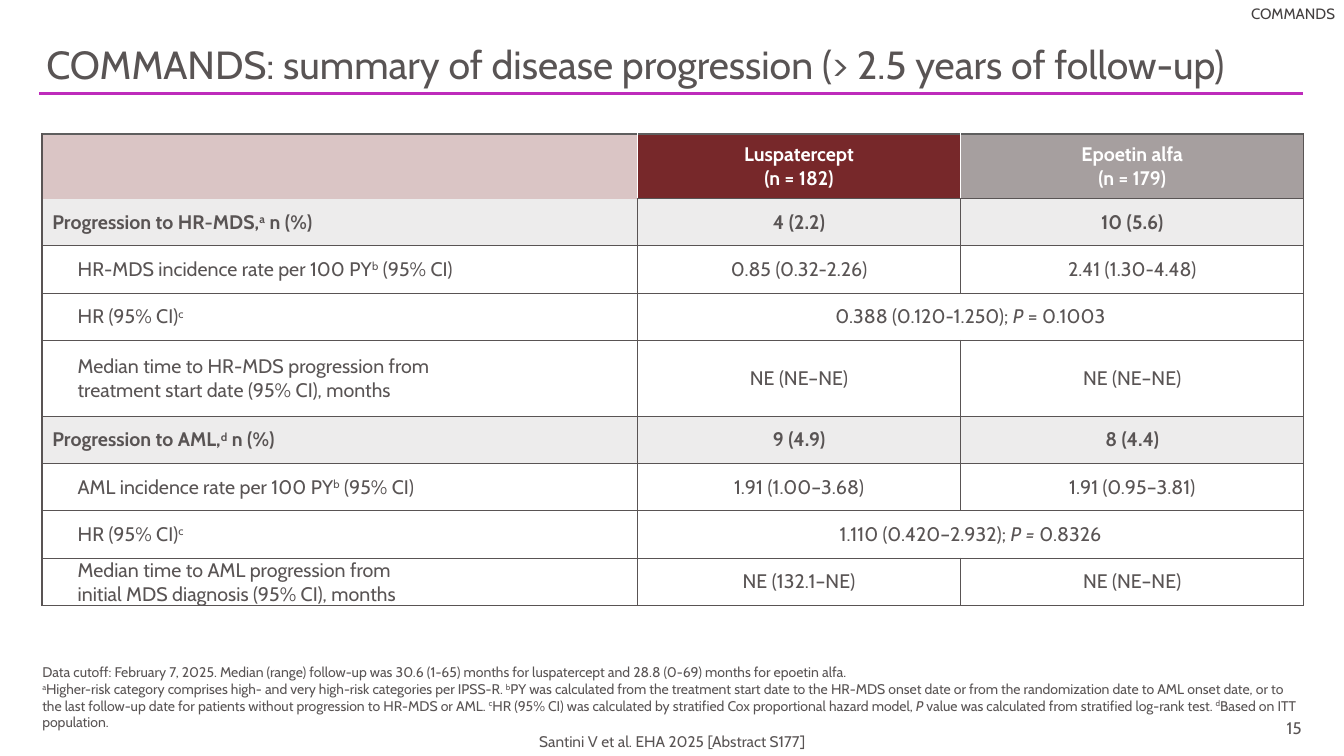
from copy import deepcopy

from lxml import etree
from pptx import Presentation
from pptx.dml.color import RGBColor
from pptx.enum.shapes import MSO_CONNECTOR
from pptx.enum.text import MSO_ANCHOR as ANCHOR, PP_ALIGN as ALIGN
from pptx.oxml.ns import qn
from pptx.util import Inches, Pt

FONT = "Cabin"
COLORS = {
    "text": "595454", "tag": "433F3F", "rule": "BE2BBB", "white": "FFFFFF",
    "top": "5E5E5E", "corner": "DAC5C5", "luspatercept": "77282A",
    "epoetin": "A69F9F", "section": "EDECEC",
}
COL_WIDTHS = [5.9, 3.21, 3.4]
ROW_HEIGHT = 0.47
ROW_HEIGHTS = {0: 0.64, 4: 0.75}

# ^x^ marks superscript and _x_ marks italics; None joins the cell to its left neighbour.
ROWS = [
    ["", "Luspatercept\n(n = 182)", "Epoetin alfa\n(n = 179)"],
    ["Progression to HR-MDS,^a^ n (%)", "4 (2.2)", "10 (5.6)"],
    ["HR-MDS incidence rate per 100 PY^b^ (95% CI)", "0.85 (0.32-2.26)", "2.41 (1.30-4.48)"],
    ["HR (95% CI)^c^", "0.388 (0.120-1.250); _P _= 0.1003", None],
    ["Median time to HR-MDS progression from \ntreatment start date (95% CI), months",
     "NE (NE–NE)", "NE (NE–NE)"],
    ["Progression to AML,^d^ n (%)", "9 (4.9)", "8 (4.4)"],
    ["AML incidence rate per 100 PY^b^ (95% CI)", "1.91 (1.00–3.68)", "1.91 (0.95–3.81)"],
    ["HR (95% CI)^c^", "1.110 (0.420–2.932); _P = _0.8326", None],
    ["Median time to AML progression from \ninitial MDS diagnosis (95% CI), months",
     "NE (132.1–NE)", "NE (NE–NE)"],
]
HEADER_FILLS = ["corner", "luspatercept", "epoetin"]
SECTION_ROWS = {1, 5}

FOOTNOTES = [
    "Data cutoff: February 7, 2025. Median (range) follow-up was 30.6 (1-65) months for "
    "luspatercept and 28.8 (0-69) months for epoetin alfa.",
    "^a^Higher-risk category comprises high- and very high-risk categories per IPSS-R. "
    "^b^PY was calculated from the treatment start date to the HR-MDS onset date or from the "
    "randomization date to AML onset date, or to the last follow-up date for patients without "
    "progression to HR-MDS or AML. ^c^HR (95% CI) was calculated by stratified Cox proportional "
    "hazard model, _P _value was calculated from stratified log-rank test. "
    "^d^Based on ITT population.",
]


def rgb(name):
    return RGBColor.from_string(COLORS[name])


def set_attrs(obj, values):
    for name, value in values.items():
        setattr(obj, name, value)


def add_run(p, text, size, color, bold, italic, raised):
    r = p.add_run()
    r.text = text
    set_attrs(r.font, {"name": FONT, "size": Pt(size), "bold": bold, "italic": italic})
    r.font.color.rgb = rgb(color)
    if raised:
        r.font._element.set("baseline", "30000")
    return r


def write(p, text, size, color="text", bold=False, align=ALIGN.LEFT):
    """Fill a paragraph from text with ^superscript^, _italic_ and line break marks."""
    p.alignment = align
    for i, part in enumerate(text.split("^")):
        for j, piece in enumerate(part.split("_")):
            for k, line in enumerate(piece.split("\n")):
                if k:
                    p.add_line_break()
                    p._p[-1].append(deepcopy(r.font._element))
                if line:
                    r = add_run(p, line, size, color, bold, j % 2 == 1, i % 2 == 1)


def add_text(slide, box, paragraphs, size, color="text", align=ALIGN.LEFT,
             anchor=ANCHOR.TOP, insets=(0.1, 0.05, 0.1, 0.05), spacing=None):
    tf = slide.shapes.add_textbox(*map(Inches, box)).text_frame
    sides = ("margin_left", "margin_top", "margin_right", "margin_bottom")
    set_attrs(tf, {"word_wrap": True, "vertical_anchor": anchor,
                   **dict(zip(sides, map(Inches, insets)))})
    for i, text in enumerate(paragraphs):
        p = tf.add_paragraph() if i else tf.paragraphs[0]
        write(p, text, size, color, align=align)
        if spacing:
            p.line_spacing = spacing


def add_rule(slide, x1, x2, y):
    line = slide.shapes.add_connector(
        MSO_CONNECTOR.STRAIGHT, Inches(x1), Inches(y), Inches(x2), Inches(y))
    line.line.color.rgb = rgb("rule")
    line.line.width = Pt(2.25)
    etree.SubElement(line._element.spPr, qn("a:effectLst"))


def set_border(cell, side, color, width):
    ln = etree.SubElement(cell._tc.get_or_add_tcPr(), qn(f"a:ln{side}"), w=str(Pt(width)))
    if color is None:
        etree.SubElement(ln, qn("a:noFill"))
    else:
        fill = etree.SubElement(ln, qn("a:solidFill"))
        etree.SubElement(fill, qn("a:srgbClr"), val=COLORS[color])


def cell_borders(row, col):
    borders = {side: ("text", 1) for side in "LRTB"}
    if col == 0:
        borders["L"] = ("text", 1.5)
    if row == 0:
        borders["T"] = ("top", 1.5)
        if col > 0:
            borders["L"] = ("white", 1)
        if col < 2:
            borders["R"] = ("white", 1)
    if col == 0 and row < 2:
        borders["B" if row == 0 else "T"] = (None, 1)
    return borders


def format_cell(cell, row, col):
    set_attrs(cell, {"vertical_anchor": ANCHOR.MIDDLE, "margin_left": Inches(0.1),
                     "margin_right": Inches(0.1), "margin_top": 0, "margin_bottom": 0})
    for side, (color, width) in cell_borders(row, col).items():
        set_border(cell, side, color, width)
    if row == 0 or row in SECTION_ROWS:
        cell.fill.solid()
        cell.fill.fore_color.rgb = rgb("section" if row else HEADER_FILLS[col])
    else:
        cell.fill.background()


def add_progression_table(slide):
    heights = [ROW_HEIGHTS.get(i, ROW_HEIGHT) for i in range(len(ROWS))]
    table = slide.shapes.add_table(
        len(ROWS), len(COL_WIDTHS), Inches(0.42), Inches(1.33),
        Inches(sum(COL_WIDTHS)), Inches(sum(heights))).table
    set_attrs(table, {"first_row": False, "horz_banding": False})
    for column, width in zip(table.columns, COL_WIDTHS):
        column.width = Inches(width)
    for i, (values, height) in enumerate(zip(ROWS, heights)):
        table.rows[i].height = Inches(height)
        strong = i == 0 or i in SECTION_ROWS
        for j, value in enumerate(values):
            cell = table.cell(i, j)
            format_cell(cell, i, j)
            if value is None:
                table.cell(i, j - 1).merge(cell)
            elif value:
                p = cell.text_frame.paragraphs[0]
                write(p, value, 14, "text" if i else "white", strong,
                      ALIGN.CENTER if j else ALIGN.LEFT)
                if j == 0 and not strong:
                    set_attrs_xml = {"marL": str(Inches(0.25)), "indent": "0"}
                    p._p.get_or_add_pPr().attrib.update(set_attrs_xml)


def main():
    prs = Presentation()
    set_attrs(prs, {"slide_width": Inches(13.33), "slide_height": Inches(7.5)})
    slide = prs.slides.add_slide(prs.slide_layouts[6])
    add_rule(slide, 0.39, 12.92, 0.93)
    add_text(slide, (4.72, 7.21, 3.9, 0.29), ["Santini V et al. EHA 2025 [Abstract S177]"],
             11, align=ALIGN.CENTER)
    add_text(slide, (10.16, 0, 3.18, 0.28), ["COMMANDS"], 10.7, "tag", ALIGN.RIGHT)
    add_text(slide, (0.41, 0.18, 12.5, 0.74),
             ["COMMANDS: summary of disease progression (> 2.5 years of follow-up)"],
             28, anchor=ANCHOR.BOTTOM, insets=[0.05] * 4, spacing=0.9)
    add_progression_table(slide)
    add_text(slide, (0.42, 6.58, 12.5, 0.67), FOOTNOTES, 10,
             anchor=ANCHOR.BOTTOM, insets=[0] * 4)
    add_text(slide, (12.19, 6.92, 0.72, 0.4), ["15"], 12, align=ALIGN.RIGHT,
             anchor=ANCHOR.BOTTOM, insets=(0.1, 0, 0, 0))
    prs.save("out.pptx")


if __name__ == "__main__":
    main()
